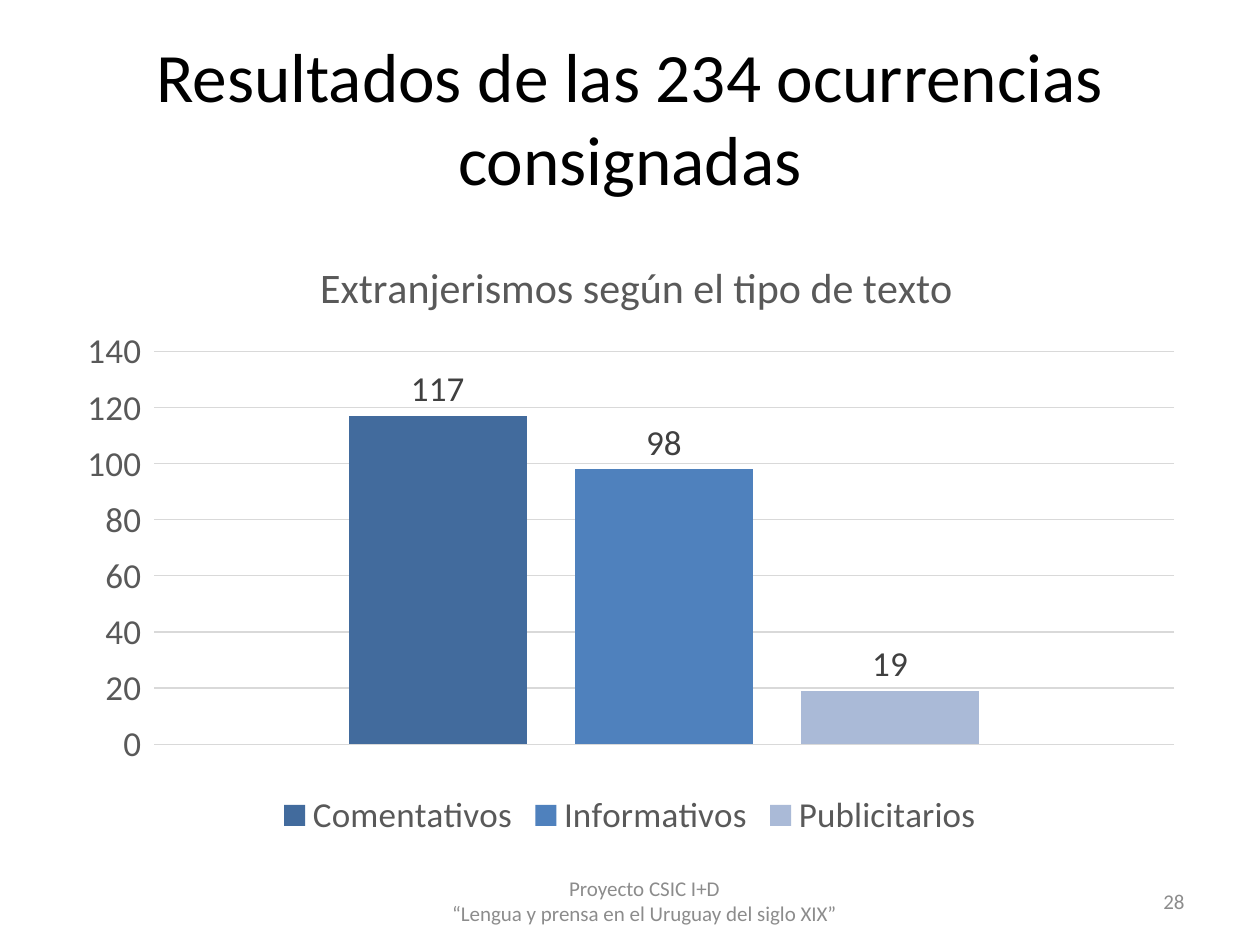
from dataclasses import dataclass

from lxml.etree import Element, SubElement
from pptx import Presentation
from pptx.chart.data import CategoryChartData as ChartData
from pptx.dml.color import RGBColor as Color
from pptx.enum.chart import XL_CHART_TYPE as ChartType
from pptx.enum.chart import XL_LABEL_POSITION as LabelPosition
from pptx.enum.chart import XL_LEGEND_POSITION as LegendPosition
from pptx.enum.chart import XL_TICK_MARK as TickMark
from pptx.enum.text import MSO_ANCHOR as Anchor
from pptx.enum.text import PP_ALIGN as Align
from pptx.oxml.ns import qn
from pptx.util import Inches, Pt


@dataclass(frozen=True)
class Theme:
    """Colours, font and type sizes of the slide."""
    font: str = "Calibri"
    title: str = "000000"
    footer: str = "8C8C8C"
    axis: str = "595959"
    label: str = "404040"
    grid: str = "D9D9D9"
    title_size: float = 39.6
    chart_title_size: float = 24
    chart_size: float = 20
    footer_size: float = 12


THEME = Theme()
WIDTH, HEIGHT = Inches(10), Inches(7.5)
SERIES = (
    ("Comentativos", 117, "426B9D"),
    ("Informativos", 98, "4F81BD"),
    ("Publicitarios", 19, "AABAD7"),
)


def place(left, top, width, height):
    """Convert inches to a tuple of lengths."""
    return tuple(Inches(value) for value in (left, top, width, height))


def style_font(font, size, color):
    """Apply the theme font with a size and colour."""
    font.name = THEME.font
    font.size = Pt(size)
    font.bold = False
    font.color.rgb = Color.from_string(color)


def add_text(slide, box, lines, size, color, align):
    """Add a vertically centred text box with one paragraph per line."""
    frame = slide.shapes.add_textbox(*place(*box)).text_frame
    frame.word_wrap = True
    frame.vertical_anchor = Anchor.MIDDLE
    frame.text = "\n".join(lines)
    for paragraph in frame.paragraphs:
        paragraph.alignment = align
        style_font(paragraph.font, size, color)


def set_layout(parent, index, inner=False, **shares):
    """Fix a chart part's position as shares of the chart's size."""
    layout = parent.find(qn("c:layout"))
    if layout is None:
        layout = Element(qn("c:layout"))
        parent.insert(index, layout)
    manual = SubElement(layout, qn("c:manualLayout"))
    if inner:
        SubElement(manual, qn("c:layoutTarget"), val="inner")
    for name in ("x", "y"):
        SubElement(manual, qn(f"c:{name}Mode"), val="edge")
    for name, share in shares.items():
        SubElement(manual, qn(f"c:{name}"), val=str(share))


def style_axes(chart):
    """Hide the category axis and style the value axis and its grid."""
    chart.category_axis.visible = False
    axis = chart.value_axis
    axis.minimum_scale, axis.maximum_scale, axis.major_unit = 0, 140, 20
    axis.major_tick_mark = TickMark.OUTSIDE
    axis.format.line.fill.background()
    style_font(axis.tick_labels.font, THEME.chart_size, THEME.axis)
    grid = axis.major_gridlines.format.line
    grid.width = Pt(0.75)
    grid.color.rgb = Color.from_string(THEME.grid)


def style_series(plot):
    """Colour the columns and show their values above them."""
    plot.gap_width, plot.overlap = 219, -27
    plot.vary_by_categories = False
    for series, (_, _, color) in zip(plot.series, SERIES):
        series.format.fill.solid()
        series.format.fill.fore_color.rgb = Color.from_string(color)
        labels = series.data_labels
        labels.show_value = True
        labels.position = LabelPosition.OUTSIDE_END
        style_font(labels.font, THEME.chart_size, THEME.label)


def add_column_chart(slide, box, title):
    """Add the column chart with its title and legend."""
    data = ChartData()
    data.categories = ["1"]
    for name, value, _ in SERIES:
        data.add_series(name, [value])
    chart = slide.shapes.add_chart(
        ChartType.COLUMN_CLUSTERED, *place(*box), data).chart
    style_font(chart.font, THEME.chart_size, THEME.title)
    chart.has_title = True
    frame = chart.chart_title.text_frame
    frame.text = title
    style_font(frame.paragraphs[0].font, THEME.chart_title_size, THEME.axis)
    chart.has_legend = True
    chart.legend.position = LegendPosition.BOTTOM
    chart.legend.include_in_layout = False
    style_font(chart.legend.font, THEME.chart_size, THEME.axis)
    style_axes(chart)
    style_series(chart.plots[0])
    set_layout(chart.chart_title._element, 1, x=0.22, y=0.05)
    plot_area = chart._chartSpace.chart.plotArea
    set_layout(plot_area, 0, inner=True, x=0.08, y=0.21, w=0.9, h=0.63)


def main():
    """Build and save the slide."""
    presentation = Presentation()
    presentation.slide_width, presentation.slide_height = WIDTH, HEIGHT
    slide = presentation.slides.add_slide(presentation.slide_layouts[6])
    add_text(slide, (0.5, 0.3, 9, 1.25),
             ["Resultados de las 234 ocurrencias consignadas"],
             THEME.title_size, THEME.title, Align.CENTER)
    add_column_chart(slide, (0.5, 1.75, 9, 4.95),
                     "Extranjerismos según el tipo de texto")
    add_text(slide, (3.42, 6.95, 3.39, 0.4),
             ["Proyecto CSIC I+D", "“Lengua y prensa en el Uruguay del siglo XIX”"],
             THEME.footer_size, THEME.footer, Align.CENTER)
    add_text(slide, (7.17, 6.95, 2.33, 0.4), ["28"],
             THEME.footer_size, THEME.footer, Align.RIGHT)
    presentation.save("out.pptx")


if __name__ == "__main__":
    main()
